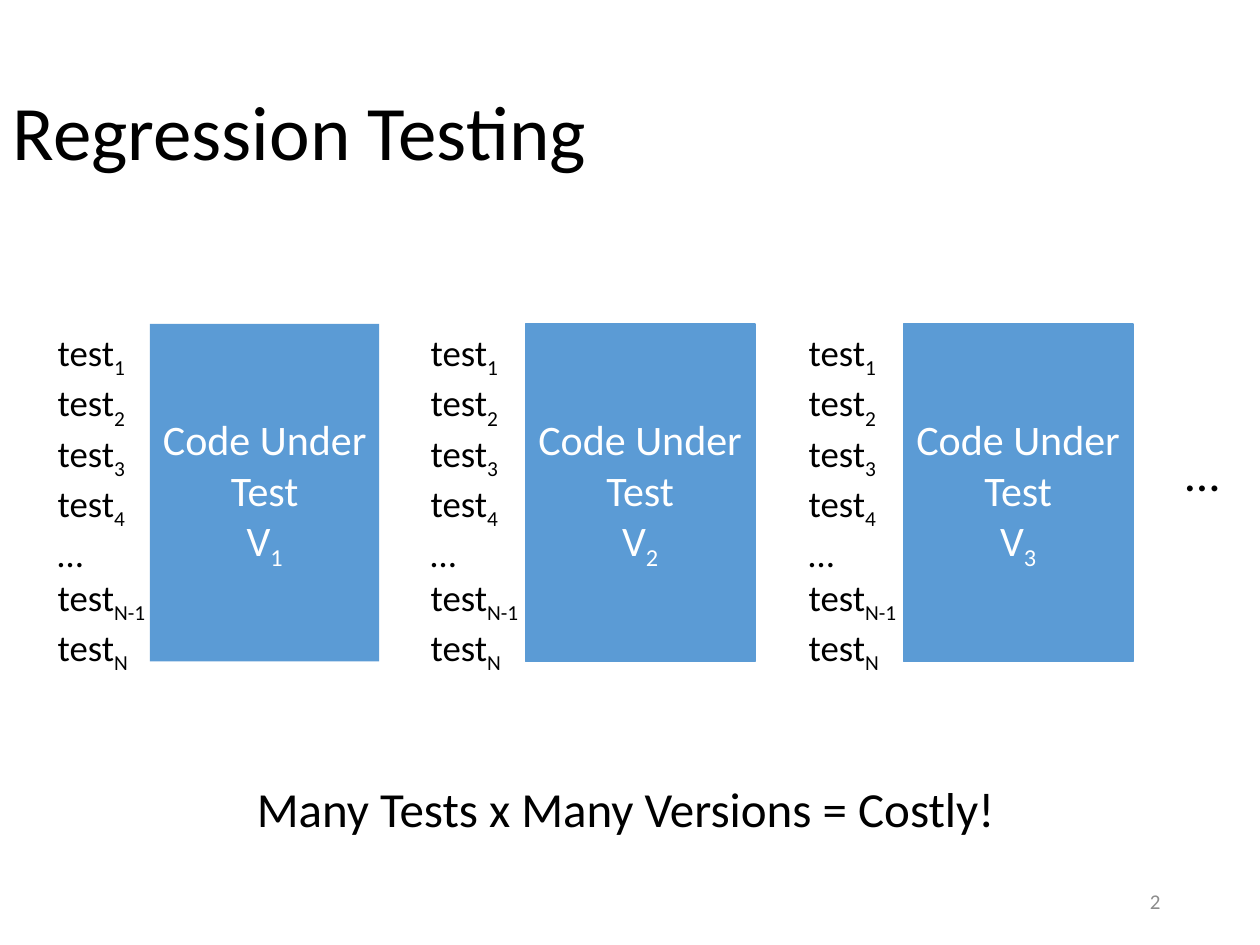
from dataclasses import dataclass

from pptx import Presentation
from pptx.dml.color import RGBColor
from pptx.enum.shapes import MSO_SHAPE
from pptx.enum.text import MSO_ANCHOR, MSO_AUTO_SIZE, PP_ALIGN
from pptx.util import Inches, Pt

RECT = MSO_SHAPE.RECTANGLE
MIDDLE, TOP = MSO_ANCHOR.MIDDLE, MSO_ANCHOR.TOP
LEFT, CENTER, RIGHT = PP_ALIGN.LEFT, PP_ALIGN.CENTER, PP_ALIGN.RIGHT
FIXED, GROW = MSO_AUTO_SIZE.NONE, MSO_AUTO_SIZE.SHAPE_TO_FIT_TEXT
TITLE_ONLY = 5


@dataclass(frozen=True)
class Theme:
    font: str = "Calibri"
    ink: str = "000000"
    paper: str = "FFFFFF"
    blue: str = "5B9BD5"
    gray: str = "8C8C8C"
    title: int = 44
    note: int = 28
    code: int = 24
    test: int = 21
    page: int = 12


@dataclass(frozen=True)
class Box:
    left: float
    top: float
    width: float
    height: float

    def place(self) -> tuple:
        return tuple(map(Inches, (self.left, self.top, self.width, self.height)))


@dataclass(frozen=True)
class Version:
    label: str
    tests: float
    code: float
    line: bool = True


THEME = Theme()
ROW = 2.57
SUITE = [("test", "1"), ("test", "2"), ("test", "3"), ("test", "4"),
         ("…", ""), ("test", "N-1"), ("test", "N")]
VERSIONS = [Version("1", 0.36, 1.19, False),
            Version("2", 3.32, 4.17),
            Version("3", 6.32, 7.17)]


def write(frame, lines: list, size: int, color: str,
          align=LEFT, anchor=TOP) -> None:
    """Fill a text frame with (text, subscript) lines."""
    frame.vertical_anchor = anchor
    for i, (text, sub) in enumerate(lines):
        para = frame.paragraphs[0] if i == 0 else frame.add_paragraph()
        para.alignment = align
        para.font.name = THEME.font
        para.font.size = Pt(size)
        para.font.color.rgb = RGBColor.from_string(color)
        para.add_run().text = text
        if sub:
            run = para.add_run()
            run.text = sub
            run.font._element.set("baseline", "-25000")


def add_text(slide, box: Box, lines: list, size: int, color: str = THEME.ink,
             wrap: bool = True, fit=GROW, **style) -> None:
    frame = slide.shapes.add_textbox(*box.place()).text_frame
    frame.word_wrap = wrap
    frame.auto_size = fit
    write(frame, lines, size, color, **style)


def add_code(slide, item: Version) -> None:
    shape = slide.shapes.add_shape(RECT, *Box(item.code, ROW, 1.82, 2.68).place())
    shape.shadow.inherit = False
    blue = RGBColor.from_string(THEME.blue)
    shape.fill.solid()
    shape.fill.fore_color.rgb = blue
    if item.line:
        shape.line.color.rgb = blue
        shape.line.width = Pt(1)
    else:
        shape.line.fill.background()
    write(shape.text_frame, [("Code Under Test", ""), ("V", item.label)],
          THEME.code, THEME.paper, CENTER, MIDDLE)


def add_title(slide, text: str) -> None:
    title = slide.shapes.title
    title.left, title.top, title.width, title.height = Box(0, 0.35, 10, 1.45).place()
    frame = title.text_frame
    frame.auto_size = FIXED
    write(frame, [(text, "")], THEME.title, THEME.ink, LEFT, MIDDLE)
    frame.paragraphs[0].line_spacing = 0.9


def main() -> None:
    deck = Presentation()
    deck.slide_width, deck.slide_height = Inches(10), Inches(7.5)
    slide = deck.slides.add_slide(deck.slide_layouts[TITLE_ONLY])
    add_title(slide, "Regression Testing")
    add_text(slide, Box(7.06, 6.95, 2.25, 0.4), [("2", "")], THEME.page,
             THEME.gray, fit=FIXED, align=RIGHT, anchor=MIDDLE)
    for item in VERSIONS:
        add_code(slide, item)
        add_text(slide, Box(item.tests, ROW, 0.99, 2.93), SUITE, THEME.test)
    add_text(slide, Box(1.94, 6.13, 6.12, 0.57),
             [("Many Tests x Many Versions = Costly!", "")], THEME.note, wrap=False)
    add_text(slide, Box(9.31, 3.46, 0.47, 0.57), [("…", "")], THEME.note, wrap=False)
    deck.save("out.pptx")


if __name__ == "__main__":
    main()
